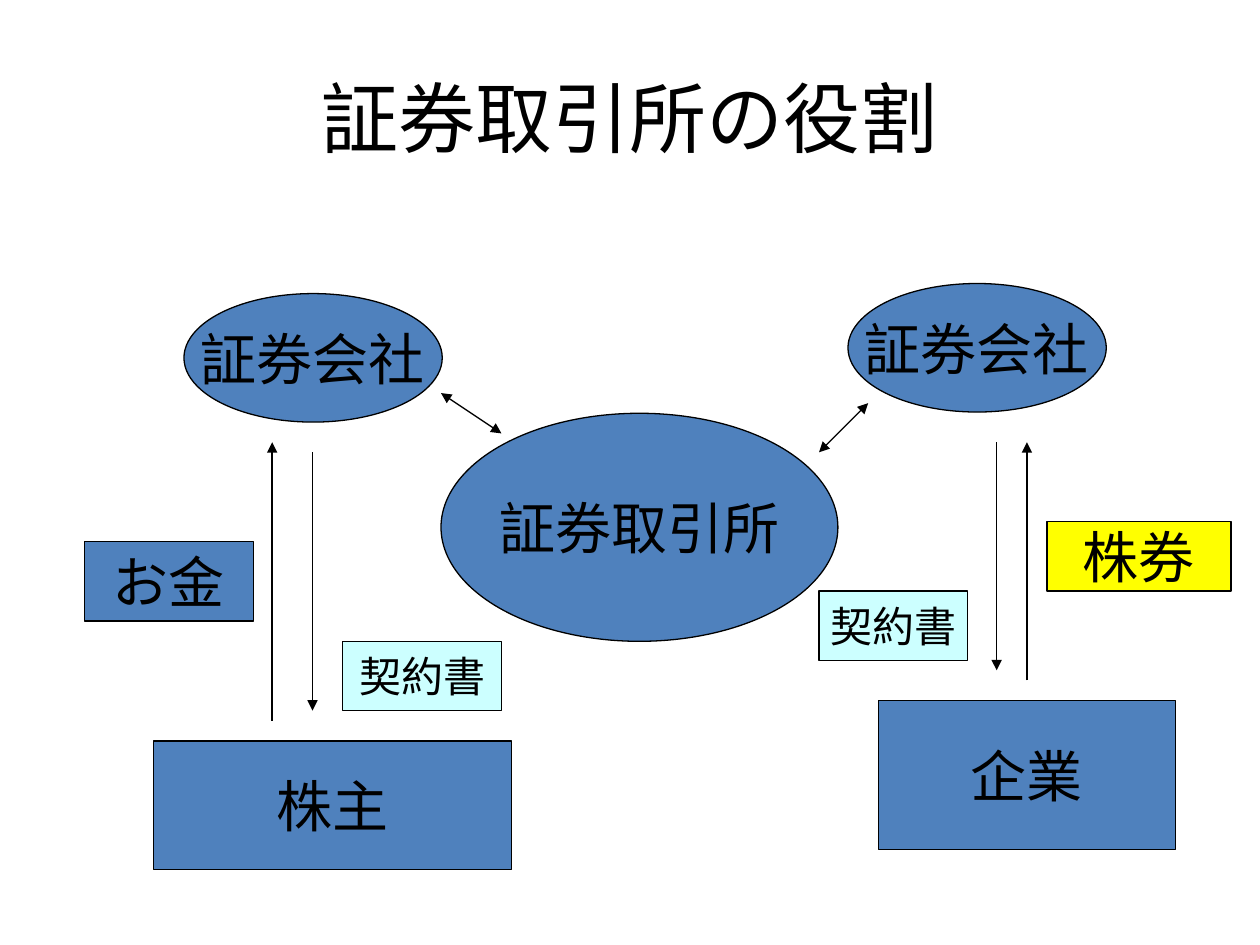
import pptx
import pptx.util
import pptx.dml.color
import pptx.enum.shapes
import pptx.enum.text
from lxml import etree

COLORS = {"black": "000000", "blue": "4F81BD", "yellow": "FFFF00", "cyan": "CCFFFF"}
COLUMNS, ROWS = 100, 75

deck = pptx.Presentation()
deck.slide_width = pptx.util.Inches(10)
deck.slide_height = pptx.util.Inches(7.5)
column = deck.slide_width / COLUMNS
row = deck.slide_height / ROWS
page = deck.slides.add_slide(deck.slide_layouts[6])


def place(*numbers):
    """Turn alternating columns and rows into slide lengths."""
    return [round(n * (row if i % 2 else column)) for i, n in enumerate(numbers)]


def write(box, text, size=32, font="Arial", wrap=False):
    frame = box.text_frame
    frame.word_wrap = wrap
    frame.vertical_anchor = pptx.enum.text.MSO_ANCHOR.MIDDLE
    para = frame.paragraphs[0]
    para.alignment = pptx.enum.text.PP_ALIGN.CENTER
    span = para.add_run()
    span.text = text
    span.font.size = pptx.util.Pt(size)
    span.font.name = font
    span.font.color.rgb = pptx.dml.color.RGBColor.from_string(COLORS["black"])


# Title
title = page.shapes.add_textbox(*place(5, 3, 90, 12.5))
write(title, "証券取引所の役割", size=44, font="Calibri", wrap=True)

# Parties, goods and contracts: text, outline, colour, size, place in the grid
OVAL = pptx.enum.shapes.MSO_SHAPE.OVAL
RECTANGLE = pptx.enum.shapes.MSO_SHAPE.RECTANGLE
boxes = [
    ("証券取引所", OVAL, "blue", 32, (35, 32.8, 31.5, 18.1)),
    ("証券会社", OVAL, "blue", 32, (14.6, 23.3, 20.5, 10.2)),
    ("証券会社", OVAL, "blue", 32, (67.3, 22.5, 20.5, 10.2)),
    ("株主", RECTANGLE, "blue", 32, (12.2, 58.8, 28.4, 10.2)),
    ("企業", RECTANGLE, "blue", 32, (69.7, 55.6, 23.6, 11.8)),
    ("株券", RECTANGLE, "yellow", 32, (83.1, 41.4, 14.6, 5.5)),
    ("お金", RECTANGLE, "blue", 32, (6.7, 43, 13.4, 6.3)),
    ("契約書", RECTANGLE, "cyan", 24, (27.2, 50.9, 12.6, 5.5)),
    ("契約書", RECTANGLE, "cyan", 24, (65, 46.9, 11.8, 5.5)),
]
for text, outline, color, size, area in boxes:
    box = page.shapes.add_shape(outline, *place(*area))
    box.shadow.inherit = False
    box.fill.solid()
    box.fill.fore_color.rgb = pptx.dml.color.RGBColor.from_string(COLORS[color])
    box.line.color.rgb = pptx.dml.color.RGBColor.from_string(COLORS["black"])
    box.line.width = pptx.util.Pt(0.75)
    write(box, text, size=size)

# Arrows: ends in the grid, and which ends carry a head
ONE_WAY = ["tailEnd"]
TWO_WAY = ["headEnd", "tailEnd"]
arrows = [
    ((21.6, 57.2, 21.6, 35.1), ONE_WAY),
    ((24.8, 35.9, 24.8, 56.4), ONE_WAY),
    ((79.1, 35.1, 79.1, 53.2), ONE_WAY),
    ((81.5, 54, 81.5, 35.1), ONE_WAY),
    ((35, 31.2, 39.8, 34.4), TWO_WAY),
    ((65, 35.9, 68.9, 32), TWO_WAY),
]
for ends, heads in arrows:
    arrow = page.shapes.add_connector(
        pptx.enum.shapes.MSO_CONNECTOR.STRAIGHT, *place(*ends))
    arrow.line.color.rgb = pptx.dml.color.RGBColor.from_string(COLORS["black"])
    arrow.line.width = pptx.util.Pt(0.75)
    for head in heads:
        etree.SubElement(arrow.line._get_or_add_ln(),
                         pptx.oxml.ns.qn("a:" + head), type="triangle")
    etree.SubElement(arrow._element.spPr, pptx.oxml.ns.qn("a:effectLst"))

deck.save("out.pptx")
